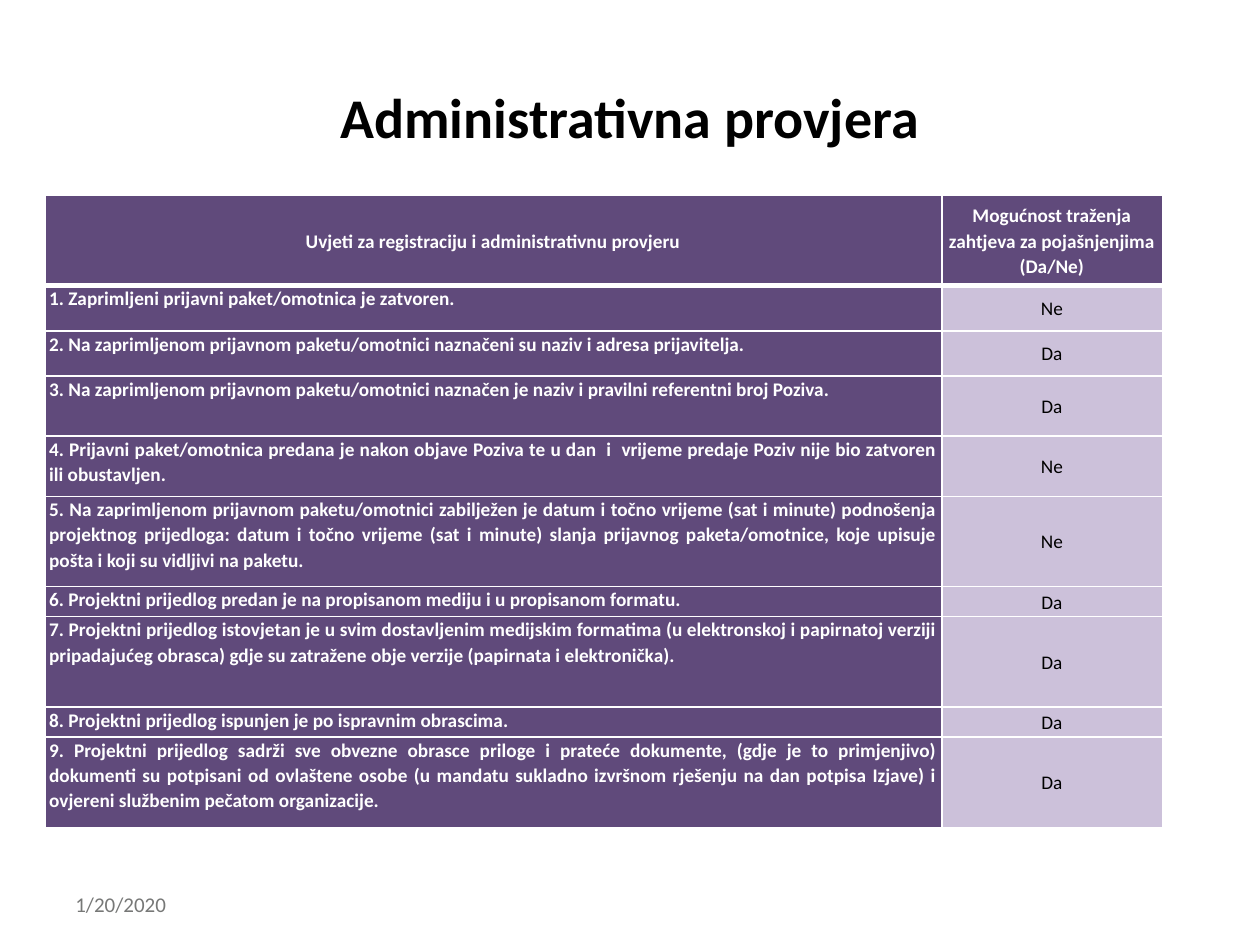
from dataclasses import dataclass

import pptx
import pptx.dml.color
import pptx.enum.text
import pptx.oxml
import pptx.oxml.ns
import pptx.util

Cm = pptx.util.Cm
Pt = pptx.util.Pt
ALIGN = pptx.enum.text.PP_ALIGN
ANCHOR = pptx.enum.text.MSO_ANCHOR


@dataclass(frozen=True)
class Theme:
    font: str = "Calibri"
    title_size: int = 32
    date_size: int = 12
    table_size: int = 11
    ink: str = "000000"
    muted: str = "777877"
    light: str = "FFFFFF"
    purple: str = "604A7B"
    lilac: str = "CCC1DA"
    rule: int = 1
    header_rule: int = 3
    line_spacing: float = 1.07


THEME = Theme()

HEADER = (
    "Uvjeti za registraciju i administrativnu provjeru",
    "Mogućnost traženja zahtjeva za pojašnjenjima (Da/Ne)",
)
CONDITIONS = [
    ("1. Zaprimljeni prijavni paket/omotnica je zatvoren.", "Ne"),
    ("2. Na zaprimljenom prijavnom paketu/omotnici naznačeni su naziv i adresa prijavitelja.", "Da"),
    ("3. Na zaprimljenom prijavnom paketu/omotnici naznačen je naziv i pravilni referentni broj Poziva.", "Da"),
    ("4. Prijavni paket/omotnica predana je nakon objave Poziva te u dan  i  vrijeme predaje Poziv "
     "nije bio zatvoren ili obustavljen.", "Ne"),
    ("5. Na zaprimljenom prijavnom paketu/omotnici zabilježen je datum i točno vrijeme (sat i minute) "
     "podnošenja projektnog prijedloga: datum i točno vrijeme (sat i minute) slanja prijavnog "
     "paketa/omotnice, koje upisuje pošta i koji su vidljivi na paketu.", "Ne"),
    ("6. Projektni prijedlog predan je na propisanom mediju i u propisanom formatu.", "Da"),
    ("7. Projektni prijedlog istovjetan je u svim dostavljenim medijskim formatima (u elektronskoj i "
     "papirnatoj verziji pripadajućeg obrasca) gdje su zatražene obje verzije (papirnata i elektronička).", "Da"),
    ("8. Projektni prijedlog ispunjen je po ispravnim obrascima.", "Da"),
    ("9. Projektni prijedlog sadrži sve obvezne obrasce priloge i prateće dokumente, (gdje je to "
     "primjenjivo) dokumenti su potpisani od ovlaštene osobe (u mandatu sukladno izvršnom rješenju na "
     "dan potpisa Izjave) i ovjereni službenim pečatom organizacije.", "Da"),
]
COLUMN_WIDTHS = (18.08, 4.45)
ROW_LINES = (3, 1.5, 1.5, 2, 2, 3, 1, 3, 1, 3)
THREE_LINES = 1.82


def rgb(colour):
    return pptx.dml.color.RGBColor.from_string(colour)


def write(paragraph, text, size, colour, bold=False, align=ALIGN.LEFT):
    paragraph.alignment = align
    run = paragraph.add_run()
    run.text = text
    run.font.name = THEME.font
    run.font.size = Pt(size)
    run.font.bold = bold
    run.font.color.rgb = rgb(colour)


def add_text(slide, left, top, width, height, text, **style):
    frame = slide.shapes.add_textbox(Cm(left), Cm(top), Cm(width), Cm(height)).text_frame
    frame.word_wrap = True
    frame.vertical_anchor = ANCHOR.MIDDLE
    write(frame.paragraphs[0], text, **style)


def add_borders(cell, bottom):
    properties = cell._tc.get_or_add_tcPr()
    sides = {"lnL": THEME.rule, "lnR": THEME.rule, "lnT": THEME.rule, "lnB": bottom}
    for position, (side, weight) in enumerate(sides.items()):
        properties.insert(position, pptx.oxml.parse_xml(
            f'<a:{side} {pptx.oxml.ns.nsdecls("a")} w="{Pt(weight)}">'
            f'<a:solidFill><a:srgbClr val="{THEME.light}"/></a:solidFill></a:{side}>'))


def fill_cell(cell, text, fill, colour, bold, align, anchor, bottom=THEME.rule):
    cell.fill.solid()
    cell.fill.fore_color.rgb = rgb(fill)
    cell.margin_left, cell.margin_right = Cm(0.08), Cm(0.1)
    cell.margin_top = cell.margin_bottom = 0
    cell.vertical_anchor = anchor
    paragraph = cell.text_frame.paragraphs[0]
    paragraph.line_spacing = THEME.line_spacing
    write(paragraph, text, THEME.table_size, colour, bold, align)
    add_borders(cell, bottom)


def add_conditions_table(slide, left, top):
    heights = [THREE_LINES * lines / 3 for lines in ROW_LINES]
    table = slide.shapes.add_table(
        len(heights), len(COLUMN_WIDTHS), Cm(left), Cm(top),
        Cm(sum(COLUMN_WIDTHS)), Cm(sum(heights))).table
    table.horz_banding = False
    for column, width in zip(table.columns, COLUMN_WIDTHS):
        column.width = Cm(width)
    for row, height in zip(table.rows, heights):
        row.height = Cm(height)
    for column, heading in enumerate(HEADER):
        fill_cell(table.cell(0, column), heading, THEME.purple, THEME.light, True,
                  ALIGN.CENTER, ANCHOR.MIDDLE, THEME.header_rule)
    for row, (condition, answer) in enumerate(CONDITIONS, start=1):
        fill_cell(table.cell(row, 0), condition, THEME.purple, THEME.light, True,
                  ALIGN.JUSTIFY, ANCHOR.TOP)
        fill_cell(table.cell(row, 1), answer, THEME.lilac, THEME.ink, False,
                  ALIGN.CENTER, ANCHOR.MIDDLE)


def main():
    presentation = pptx.Presentation()
    presentation.slide_width, presentation.slide_height = Cm(25.4), Cm(19.05)
    slide = presentation.slides.add_slide(presentation.slide_layouts[6])
    add_text(slide, 1.27, 17.72, 5.92, 1.02, "1/20/2020",
             size=THEME.date_size, colour=THEME.muted)
    add_text(slide, 1.27, 0.76, 22.86, 3.18, "Administrativna provjera",
             size=THEME.title_size, colour=THEME.ink, bold=True, align=ALIGN.CENTER)
    add_conditions_table(slide, 0.91, 3.94)
    presentation.save("out.pptx")


if __name__ == "__main__":
    main()
